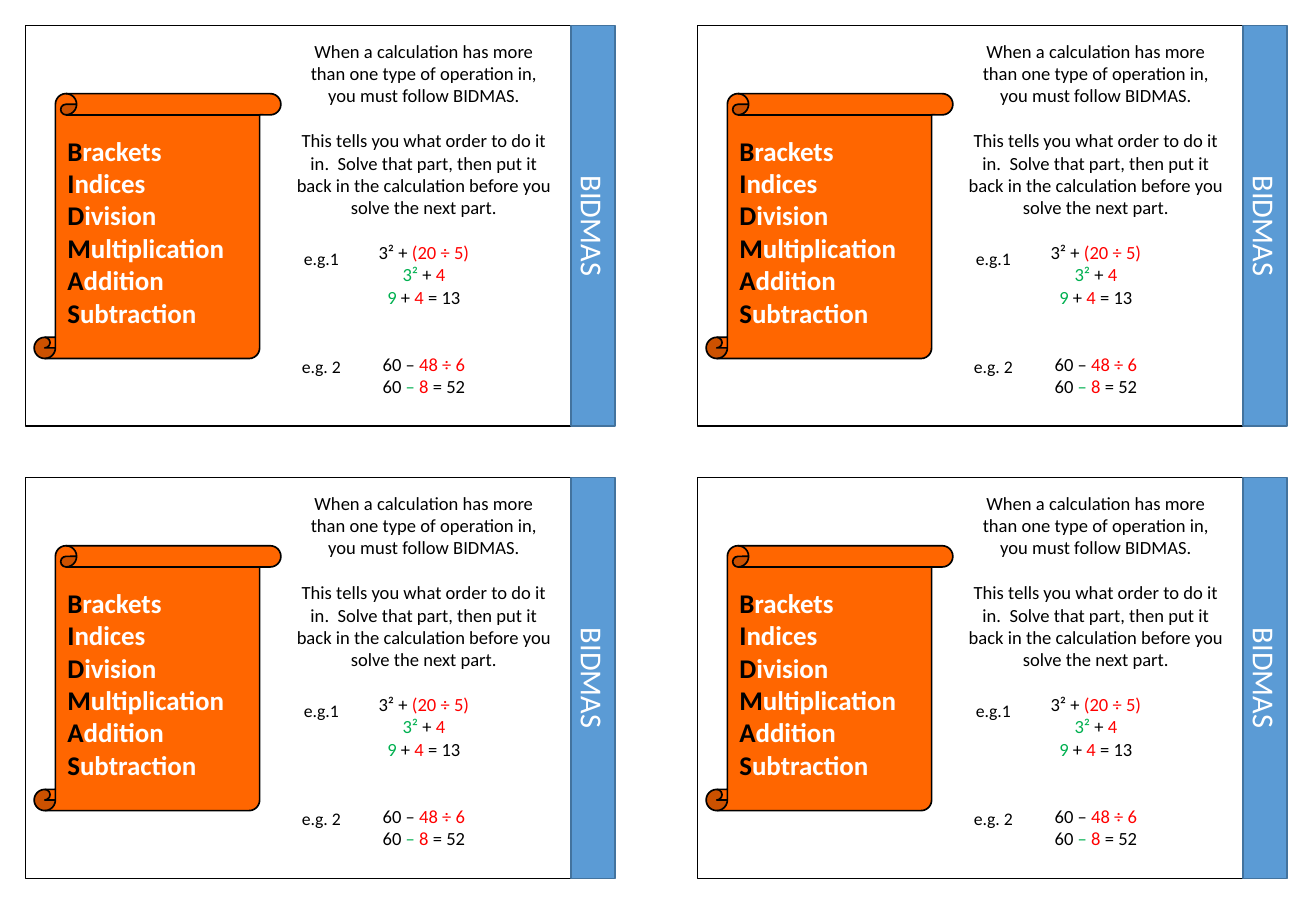
"""Build a sheet of four identical BIDMAS revision cards."""
from dataclasses import dataclass
from itertools import product
from typing import Any, NamedTuple

from pptx import Presentation
from pptx.dml.color import RGBColor
from pptx.enum.shapes import MSO_SHAPE as Preset
from pptx.enum.text import MSO_ANCHOR as Anchor, PP_ALIGN as Align
from pptx.shapes.autoshape import Shape
from pptx.util import Pt

BLACK = RGBColor(0x00, 0x00, 0x00)
WHITE = RGBColor(0xFF, 0xFF, 0xFF)
RED = RGBColor(0xFF, 0x00, 0x00)
GREEN = RGBColor(0x00, 0xB0, 0x50)
ORANGE = RGBColor(0xFF, 0x66, 0x00)
BLUE = RGBColor(0x5B, 0x9B, 0xD5)
DARK_BLUE = RGBColor(0x43, 0x73, 0x9E)

MARGIN = 15.1
COLUMN_PITCH, ROW_PITCH = 398.3, 268
BODY_LINE = 13.4
LABEL_GAP = 51.3


class Box(NamedTuple):
    left: float
    top: float
    width: float
    height: float

    def on_card(self, x: float, y: float) -> list[Pt]:
        return [Pt(v) for v in (self.left + x, self.top + y, self.width, self.height)]


class Piece(NamedTuple):
    text: str
    color: RGBColor = BLACK


@dataclass(frozen=True)
class Line:
    pieces: tuple[Piece, ...]
    gap: float = 0


@dataclass(frozen=True)
class Writing:
    lines: tuple[Line, ...]
    size: float
    bold: bool = False
    align: Align = Align.CENTER
    anchor: Anchor = Anchor.MIDDLE


@dataclass(frozen=True)
class Panel:
    box: Box
    preset: Preset
    fill: RGBColor
    outline: RGBColor
    format: dict[str, Any]


FRAME = Panel(Box(0, 0, 349.2, 237.6), Preset.RECTANGLE, WHITE, BLACK, {})
BANNER = Panel(Box(217.6, 105.9, 237.6, 25.9), Preset.RECTANGLE, BLUE, DARK_BLUE,
               {"rotation": 90})
SCROLL = Panel(Box(5.2, 40.4, 146.2, 157), Preset.VERTICAL_SCROLL, ORANGE, BLACK, {})
SCROLL_CURL = 0.086
EXPLANATION_BOX = Box(153.4, 0, 165.6, 229)
LABEL_BOX = Box(153.4, 128.2, 43.9, 93.6)

OPERATIONS = ("Brackets", "Indices", "Division", "Multiplication", "Addition", "Subtraction")

TITLE = Writing((Line((Piece("BIDMAS", WHITE),)),), 18)
MNEMONIC = Writing(
    tuple(Line((Piece(word[0]), Piece(word[1:], WHITE))) for word in OPERATIONS),
    16, bold=True, align=Align.LEFT)
EXPLANATION = Writing((
    Line((Piece("When a calculation has more than one type of operation in, "
                "you must follow BIDMAS."),)),
    Line((Piece("This tells you what order to do it in.  Solve that part, then put it "
                "back in the calculation before you solve the next part."),), BODY_LINE),
    Line((Piece("3² + "), Piece("(20 ÷ 5)", RED)), BODY_LINE),
    Line((Piece("3²", GREEN), Piece(" + "), Piece("4", RED))),
    Line((Piece("9", GREEN), Piece(" + "), Piece("4 ", RED), Piece("= 13"))),
    Line((Piece("60 – "), Piece("48 ÷ 6", RED)), 2 * BODY_LINE),
    Line((Piece("60 "), Piece("– ", GREEN), Piece("8 ", RED), Piece("= 52"))),
), 11)
EXAMPLE_LABELS = Writing(
    (Line((Piece("e.g.1"),)), Line((Piece("e.g. 2"),), LABEL_GAP)),
    10.5, anchor=Anchor.TOP)


def apply_format(target: Any, values: dict[str, Any]) -> None:
    """Set each named attribute of the target."""
    for name, value in values.items():
        setattr(target, name, value)


def write(holder: Shape, writing: Writing) -> None:
    """Fill a shape or text box with coloured lines."""
    frame = holder.text_frame
    apply_format(frame, {"word_wrap": True, "vertical_anchor": writing.anchor})
    for index, line in enumerate(writing.lines):
        paragraph = frame.add_paragraph() if index else frame.paragraphs[0]
        apply_format(paragraph, {"alignment": writing.align, "space_before": Pt(line.gap)})
        for piece in line.pieces:
            run = paragraph.add_run()
            run.text = piece.text
            apply_format(run.font, {"name": "Calibri", "size": Pt(writing.size),
                                    "bold": writing.bold})
            run.font.color.rgb = piece.color


def draw_panel(shapes: Any, panel: Panel, x: float, y: float) -> Shape:
    """Draw a filled, outlined panel on the card at x, y."""
    drawn = shapes.add_shape(panel.preset, *panel.box.on_card(x, y))
    apply_format(drawn, panel.format)
    drawn.shadow.inherit = False
    drawn.fill.solid()
    drawn.fill.fore_color.rgb = panel.fill
    drawn.line.color.rgb = panel.outline
    drawn.line.width = Pt(1)
    return drawn


def draw_card(shapes: Any, x: float, y: float) -> None:
    """Draw one whole revision card with its corner at x, y."""
    draw_panel(shapes, FRAME, x, y)
    content = shapes.add_group_shape().shapes
    write(draw_panel(content, BANNER, x, y), TITLE)
    scroll = draw_panel(content, SCROLL, x, y)
    scroll.adjustments[0] = SCROLL_CURL
    write(scroll, MNEMONIC)
    for box, writing in ((EXPLANATION_BOX, EXPLANATION), (LABEL_BOX, EXAMPLE_LABELS)):
        write(content.add_textbox(*box.on_card(x, y)), writing)


def main() -> None:
    """Lay out the cards in two rows of two and save the sheet."""
    deck = Presentation()
    apply_format(deck, {"slide_width": Pt(780), "slide_height": Pt(540)})
    sheet = deck.slides.add_slide(deck.slide_layouts[6])
    for row, column in product(range(2), repeat=2):
        draw_card(sheet.shapes, MARGIN + column * COLUMN_PITCH, MARGIN + row * ROW_PITCH)
    deck.save("out.pptx")


if __name__ == "__main__":
    main()
